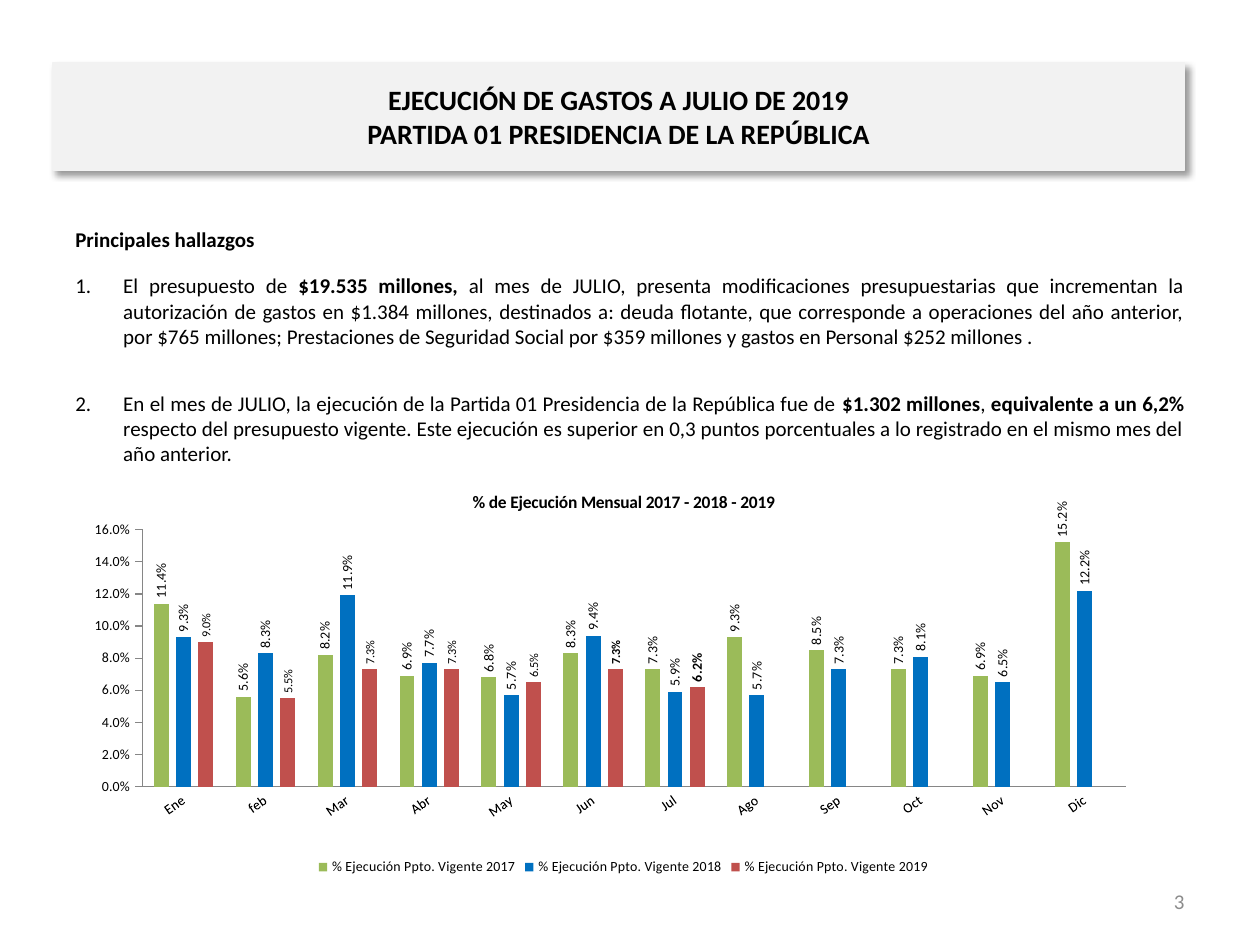
from lxml import etree
from pptx import Presentation
from pptx.chart.data import CategoryChartData
from pptx.dml.color import RGBColor
from pptx.enum import chart as ch, text
from pptx.oxml import parse_xml
from pptx.oxml.ns import nsdecls, qn
from pptx.util import Inches, Pt

W, H = 10, 7.5
FONT = "Calibri"
COLORS = {"black": "000000", "band": "F2F2F2", "grey": "8C8C8C", "axis": "868686",
          "2017": "9BBB59", "2018": "0070C0", "2019": "C0504D"}
MONTHS = ["Ene", "feb", "Mar", "Abr", "May", "Jun",
          "Jul", "Ago", "Sep", "Oct", "Nov", "Dic"]
EXECUTION = {
    "2017": [11.4, 5.6, 8.2, 6.9, 6.8, 8.3, 7.3, 9.3, 8.5, 7.3, 6.9, 15.2],
    "2018": [9.3, 8.3, 11.9, 7.7, 5.7, 9.4, 5.9, 5.7, 7.3, 8.1, 6.5, 12.2],
    "2019": [9.0, 5.5, 7.3, 7.3, 6.5, 7.3, 6.2] + [None] * 5,
}
# Each finding is a list of (text, bold) runs
FINDINGS = [
    [("El presupuesto de ", False), ("$19.535 millones,", True),
     (" al mes de JULIO, presenta modificaciones presupuestarias que incrementan la "
      "autorización de gastos en $1.384 millones, destinados a: deuda flotante, que "
      "corresponde a operaciones del año anterior, por $765 millones; Prestaciones de "
      "Seguridad Social por $359 millones y gastos en Personal $252 millones .", False)],
    [("En el mes de JULIO, la ejecución de la Partida 01 Presidencia de la República "
      "fue de ", False), ("$1.302 millones", True), (", ", False),
     ("equivalente a un 6,2%", True),
     (" respecto del presupuesto vigente. Este ejecución es superior en 0,3 puntos "
      "porcentuales a lo registrado en el mismo mes del año anterior.", False)],
]


def rgb(name):
    return RGBColor.from_string(COLORS[name])


def set_font(font, size, color="black", bold=False):
    font.name, font.size, font.bold = FONT, Pt(size), bold
    font.color.rgb = rgb(color)


def write(p, runs, size=12, color="black", align=None, space=0, numbered=False):
    """Fill a paragraph with (text, bold) runs; a newline makes a line break."""
    p.alignment = align
    p.space_before = p.space_after = Pt(space)
    if numbered:
        pPr = p._p.get_or_add_pPr()
        pPr.set("marL", str(Inches(0.38)))
        pPr.set("indent", str(-Inches(0.38)))
        etree.SubElement(pPr, qn("a:buFont")).set("typeface", "+mj-lt")
        etree.SubElement(pPr, qn("a:buAutoNum")).set("type", "arabicPeriod")
    for content, bold in runs:
        for i, line in enumerate(content.split("\n")):
            if i:
                p.add_line_break()
            r = p.add_run()
            r.text = line
            set_font(r.font, size, color, bold)


def place(sp, x, y, w, h):
    sp.left, sp.top, sp.width, sp.height = map(Inches, (x, y, w, h))


def add_box(s, x, y, w, h, anchor=text.MSO_ANCHOR.TOP):
    tf = s.shapes.add_textbox(*map(Inches, (x, y, w, h))).text_frame
    tf.word_wrap = True
    tf.vertical_anchor = anchor
    return tf


def add_title(s, content):
    sp = s.shapes.title
    place(sp, 0.42, 0.5, 8.98, 0.85)
    sp.fill.solid()
    sp.fill.fore_color.rgb = sp.line.color.rgb = rgb("band")
    sp.line.width = Pt(0.75)
    sp._element.spPr.append(parse_xml(
        f'<a:effectLst {nsdecls("a")}><a:outerShdw blurRad="{Pt(4)}" dist="{Pt(3)}" '
        'dir="2700000" algn="tl" rotWithShape="0"><a:srgbClr val="000000">'
        '<a:alpha val="40000"/></a:srgbClr></a:outerShdw></a:effectLst>'))
    tf = sp.text_frame
    tf.auto_size = text.MSO_AUTO_SIZE.NONE
    tf.vertical_anchor = text.MSO_ANCHOR.MIDDLE
    write(tf.paragraphs[0], [(content, True)], size=16, align=text.PP_ALIGN.CENTER)


def add_findings(s):
    tf = add_box(s, 0.5, 1.75, 9, 2)
    write(tf.paragraphs[0], [("Principales hallazgos", True)],
          align=text.PP_ALIGN.JUSTIFY)
    for runs in FINDINGS:
        write(tf.add_paragraph(), runs, align=text.PP_ALIGN.JUSTIFY,
              space=12, numbered=True)


def rotate(element, degrees):
    """Turn every text body below a chart element."""
    for body in element.xpath(".//c:txPr/a:bodyPr"):
        body.set("rot", str(degrees * 60000))
        body.set("vert", "horz")


def set_layout(parent, **shares):
    """Place the plot by shares of the chart's size."""
    for old in parent.findall(qn("c:layout")):
        parent.remove(old)
    parts = "".join(f'<c:{k} val="{v}"/>' for k, v in shares.items())
    parent.insert(0, parse_xml(
        f'<c:layout {nsdecls("c")}><c:manualLayout><c:layoutTarget val="inner"/>'
        f'<c:xMode val="edge"/><c:yMode val="edge"/>{parts}'
        '</c:manualLayout></c:layout>'))


def format_axis(axis, tick):
    axis.has_major_gridlines = False
    axis.major_tick_mark, axis.minor_tick_mark = tick, ch.XL_TICK_MARK.NONE
    axis.format.line.color.rgb = rgb("axis")
    set_font(axis.tick_labels.font, 8)


def format_series(ser, year):
    ser.format.fill.solid()
    ser.format.fill.fore_color.rgb = rgb(year)
    ser.invert_if_negative = False
    labels = ser.data_labels
    labels.show_value = True
    labels.number_format, labels.number_format_is_linked = "0.0%", False
    labels.position = ch.XL_LABEL_POSITION.OUTSIDE_END
    set_font(labels.font, 7 if year == "2019" else 8)
    if year == "2019":  # the two latest months stand out
        for month, size in (("Jun", 7), ("Jul", 8)):
            label = ser.points[MONTHS.index(month)].data_label
            set_font(label.font, size, bold=True)
            label.position = ch.XL_LABEL_POSITION.OUTSIDE_END
    rotate(ser._element, -90)


def add_execution_chart(s):
    data = CategoryChartData(number_format="0.0%")
    data.categories = MONTHS
    for year, values in EXECUTION.items():
        data.add_series(f"% Ejecución Ppto. Vigente {year}",
                        [None if v is None else round(v / 100, 3) for v in values])
    chart = s.shapes.add_chart(ch.XL_CHART_TYPE.COLUMN_CLUSTERED,
                               *map(Inches, (0.75, 3.75, 8.35, 3.24)), data).chart
    set_font(chart.font, 10)
    chart.has_title = True
    write(chart.chart_title.text_frame.paragraphs[0],
          [("% de Ejecución Mensual 2017 - 2018 - 2019", True)], size=10)
    chart.chart_title.include_in_layout = False
    chart.has_legend = True
    chart.legend.position = ch.XL_LEGEND_POSITION.BOTTOM
    chart.legend.include_in_layout = False
    set_font(chart.legend.font, 8)

    # Axes
    format_axis(chart.category_axis, ch.XL_TICK_MARK.NONE)
    rotate(chart.category_axis._element, -35)
    axis = chart.value_axis
    format_axis(axis, ch.XL_TICK_MARK.OUTSIDE)
    axis.minimum_scale, axis.maximum_scale, axis.major_unit = 0, 0.16, 0.02
    axis.tick_labels.number_format = "0.0%"
    axis.tick_labels.number_format_is_linked = False

    # Columns
    plot = chart.plots[0]
    plot.vary_by_categories = False
    plot.gap_width, plot.overlap = 150, -49
    for ser, year in zip(plot.series, EXECUTION):
        format_series(ser, year)
    set_layout(chart._chartSpace.chart.plotArea, x=0.04, y=0.14, w=0.94, h=0.63)


def add_page_number(s, number):
    tf = add_box(s, 7.17, 6.95, 2.33, 0.4, text.MSO_ANCHOR.MIDDLE)
    write(tf.paragraphs[0], [(str(number), False)], color="grey",
          align=text.PP_ALIGN.RIGHT)


def main():
    prs = Presentation()
    prs.slide_width, prs.slide_height = Inches(W), Inches(H)
    s = prs.slides.add_slide(prs.slide_layouts[5])
    add_title(s, "EJECUCIÓN DE GASTOS A JULIO DE 2019\n"
                 "PARTIDA 01 PRESIDENCIA DE LA REPÚBLICA")
    add_findings(s)
    add_execution_chart(s)
    add_page_number(s, 3)
    prs.save("out.pptx")


if __name__ == "__main__":
    main()
